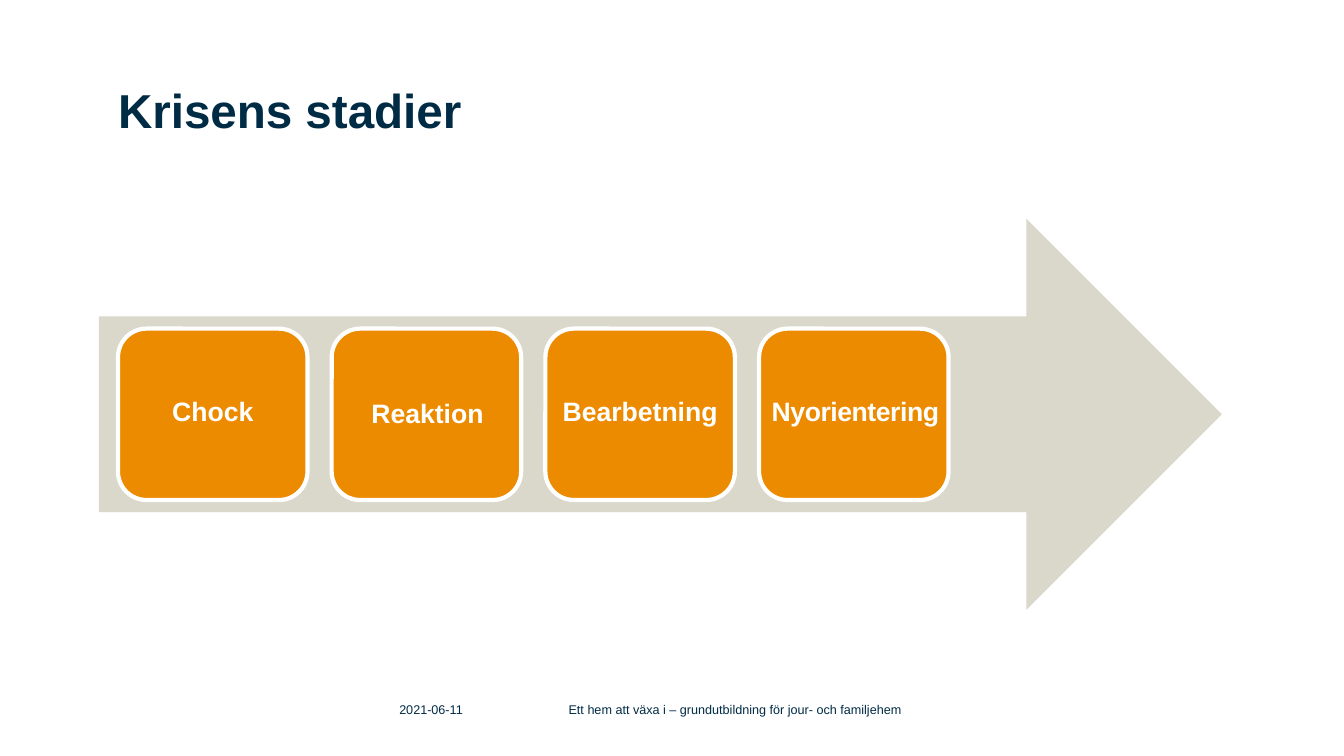
from dataclasses import dataclass

from pptx import Presentation
from pptx.dml.color import RGBColor
from pptx.enum.shapes import MSO_SHAPE
from pptx.enum.text import MSO_ANCHOR, MSO_AUTO_SIZE, PP_ALIGN
from pptx.shapes.autoshape import Shape
from pptx.util import Inches, Pt

SLIDE_W, SLIDE_H = Inches(13.33), Inches(7.5)
COLORS = {"navy": "002B45", "sand": "DAD7CB", "orange": "ED8B00", "white": "FFFFFF"}
FORMATS = {
    "title": {"size": Pt(34), "bold": True, "name": "Arial"},
    "stage": {"size": Pt(19), "bold": True, "name": "Arial"},
    "footer": {"size": Pt(9), "bold": False, "name": "Arial"},
}


@dataclass
class Box:
    """Place and size in percent of the slide's width and height."""
    left: float
    top: float
    width: float
    height: float

    def emu(self) -> tuple[int, int, int, int]:
        return (int(SLIDE_W * self.left / 100), int(SLIDE_H * self.top / 100),
                int(SLIDE_W * self.width / 100), int(SLIDE_H * self.height / 100))


@dataclass
class Stage:
    name: str
    dx: float = 0
    dy: float = 0
    extra_width: float = 0
    spacing: int = 0  # hundredths of a point


STAGES = [
    Stage("Chock"),
    Stage("Reaktion", dx=0.08, dy=0.27),
    Stage("Bearbetning"),
    Stage("Nyorientering", dx=-0.9, extra_width=2.03, spacing=-30),
]
FIRST_LEFT, STAGE_PITCH, STAGE_W = 8.78, 15.9, 14.1


def add_shape(shapes, kind: MSO_SHAPE, box: Box, color: str) -> Shape:
    sp = shapes.add_shape(kind, *box.emu())
    sp.shadow.inherit = False
    sp.fill.solid()
    sp.fill.fore_color.rgb = RGBColor.from_string(COLORS[color])
    sp.line.fill.background()
    return sp


def add_text(shapes, text: str, box: Box, style: str, color: str = "navy") -> Shape:
    sp = shapes.add_textbox(*box.emu())
    tf = sp.text_frame
    tf.word_wrap = True
    p = tf.paragraphs[0]
    r = p.add_run()
    r.text = text
    for name, value in FORMATS[style].items():
        setattr(r.font, name, value)
    r.font.color.rgb = RGBColor.from_string(COLORS[color])
    return sp


def clear_margins(sp: Shape) -> None:
    for side in ("left", "top", "right", "bottom"):
        setattr(sp.text_frame, f"margin_{side}", 0)


def add_stage(shapes, stage: Stage, left: float) -> None:
    group = shapes.add_group_shape().shapes
    card = add_shape(group, MSO_SHAPE.ROUNDED_RECTANGLE,
                     Box(left, 43.47, STAGE_W, 22.67), "orange")
    card.line.color.rgb = RGBColor.from_string(COLORS["white"])
    card.line.width = Pt(3)
    label_box = Box(left + stage.dx, 51.6 + stage.dy, STAGE_W + stage.extra_width, 5.6)
    label = add_text(group, stage.name, label_box, "stage", "white")
    label.text_frame.auto_size = MSO_AUTO_SIZE.SHAPE_TO_FIT_TEXT
    p = label.text_frame.paragraphs[0]
    p.alignment = PP_ALIGN.CENTER
    if stage.spacing:
        p.runs[0].font._element.set("spc", str(stage.spacing))


def main() -> None:
    prs = Presentation()
    prs.slide_width, prs.slide_height = SLIDE_W, SLIDE_H
    s = prs.slides.add_slide(prs.slide_layouts[6])

    # Title
    title = add_text(s.shapes, "Krisens stadier", Box(FIRST_LEFT, 10, 74.72, 18.93), "title")
    clear_margins(title)
    title.text_frame.paragraphs[0].line_spacing = 1.1

    # Arrow with the stages of the crisis
    add_shape(s.shapes, MSO_SHAPE.RIGHT_ARROW, Box(7.35, 28.93, 83.57, 51.73), "sand")
    for i, stage in enumerate(STAGES):
        add_stage(s.shapes, stage, FIRST_LEFT + i * STAGE_PITCH)

    # Date and footer
    for text, left, width in (
        ("2021-06-11", 29.71, 12.6),
        ("Ett hem att växa i – grundutbildning för jour- och familjehem", 42.31, 31.66),
    ):
        sp = add_text(s.shapes, text, Box(left, 91.87, width, 3.87), "footer")
        clear_margins(sp)
        sp.text_frame.vertical_anchor = MSO_ANCHOR.MIDDLE

    prs.save("out.pptx")


if __name__ == "__main__":
    main()
